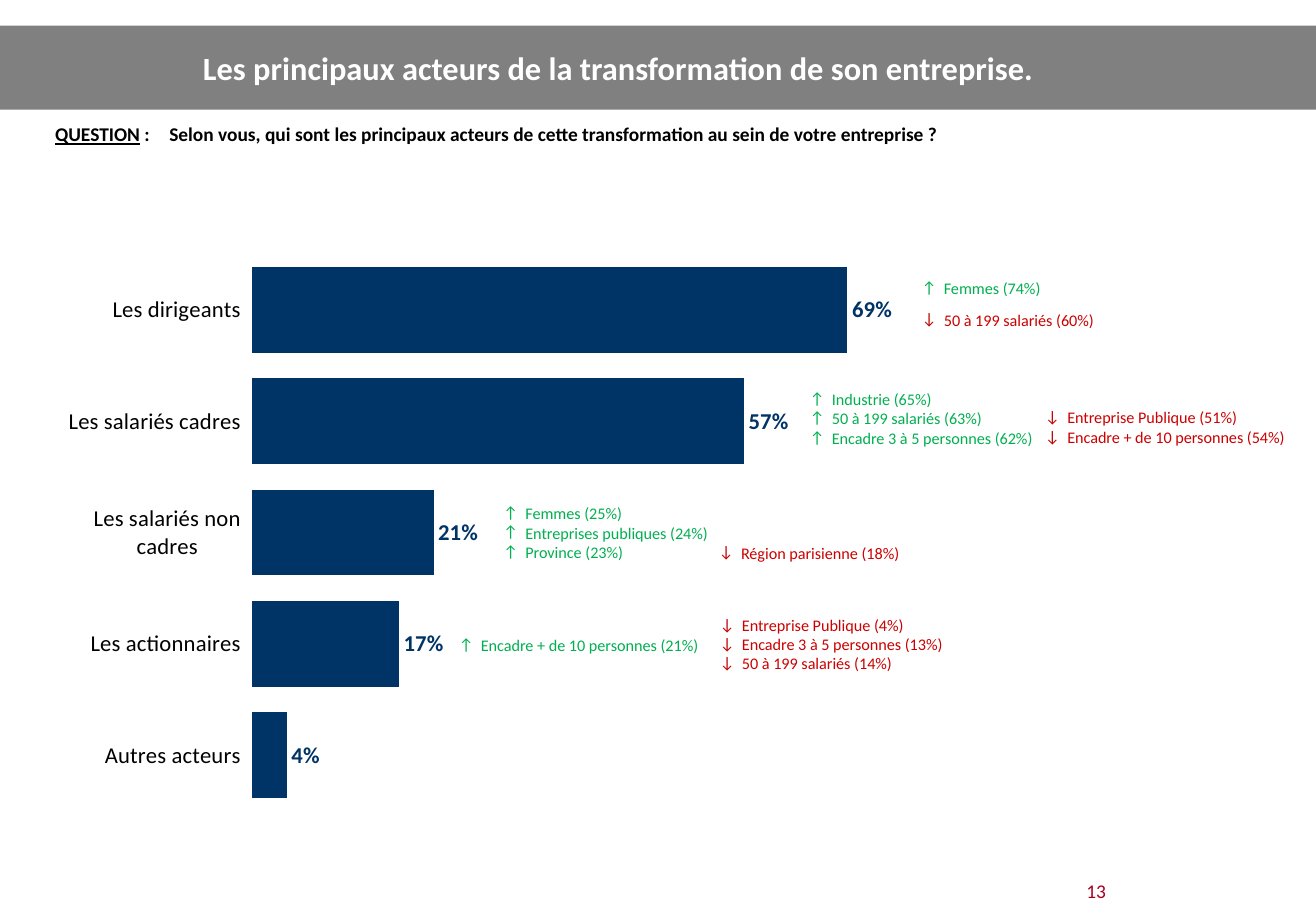
from pptx import Presentation
from pptx.chart.data import CategoryChartData
from pptx.dml.color import RGBColor
from pptx.enum.chart import XL_CHART_TYPE as ChartType, XL_LABEL_POSITION as LabelPosition
from pptx.enum.chart import XL_TICK_LABEL_POSITION as TickLabels, XL_TICK_MARK as TickMark
from pptx.enum.shapes import MSO_SHAPE as Shape
from pptx.enum.text import MSO_ANCHOR as Anchor, MSO_AUTO_SIZE as AutoSize, PP_ALIGN as Align
from pptx.oxml import parse_xml
from pptx.oxml.ns import nsdecls, qn
from pptx.util import Cm, Pt

COLORS = {
    "band": "808080", "title": "FFFFFF", "text": "000000", "page": "A50021", "bar": "003366",
    "up": "00B050", "up_arrow": "00B050", "down": "CC0000", "down_arrow": "C00000",
}
ARROWS = {"up": "↑", "down": "↓"}
NOTE_WIDTHS = {"up": 5.94, "down": 6.5}
ACTORS = {
    "Les dirigeants": 0.69,
    "Les salariés cadres": 0.57,
    "Les salariés non cadres": 0.21,
    "Les actionnaires": 0.17,
    "Autres acteurs": 0.04,
}
NOTES = [
    ("up", 19.84, 5.94, ["Femmes (74%)"]),
    ("down", 19.84, 6.63, ["50 à 199 salariés (60%)"]),
    ("up", 17.4, 8.36, ["Industrie (65%)", "50 à 199 salariés (63%)", "Encadre 3 à 5 personnes (62%)"]),
    ("down", 22.53, 8.76, ["Entreprise Publique (51%)", "Encadre + de 10 personnes (54%)"]),
    ("up", 10.72, 10.85, ["Femmes (25%)", "Entreprises publiques (24%)", "Province (23%)"]),
    ("down", 15.42, 11.71, ["Région parisienne (18%)"]),
    ("up", 9.75, 13.72, ["Encadre + de 10 personnes (21%)"]),
    ("down", 15.44, 13.28, ["Entreprise Publique (4%)", "Encadre 3 à 5 personnes (13%)", "50 à 199 salariés (14%)"]),
]


def color(key):
    return RGBColor.from_string(COLORS[key])


def style_font(font, size=10, ink="text", bold=False, underline=False):
    font.name = "Calibri"
    font.size = Pt(size)
    font.bold = bold
    font.underline = underline
    font.color.rgb = color(ink)


def write(paragraph, text, align=None, **style):
    if align is not None:
        paragraph.alignment = align
    run = paragraph.add_run()
    run.text = text
    style_font(run.font, **style)


def hang(paragraph, indent):
    properties = paragraph._p.get_or_add_pPr()
    properties.set("marL", str(Cm(indent)))
    properties.set("indent", str(-Cm(indent)))
    return properties


class SurveySlide:
    def __init__(self, presentation):
        self.slide = presentation.slides.add_slide(presentation.slide_layouts[5])
        self.width = presentation.slide_width

    def band(self, top, height):
        band = self.slide.shapes.add_shape(Shape.RECTANGLE, 0, Cm(top), self.width, Cm(height))
        band.shadow.inherit = False
        band.fill.solid()
        band.fill.fore_color.rgb = color("band")
        band.line.fill.background()
        self.slide.shapes._spTree.insert(2, band._element)

    def title(self, text, left, top, width, height):
        title = self.slide.shapes.title
        title.left, title.top, title.width, title.height = map(Cm, (left, top, width, height))
        frame = title.text_frame
        frame.auto_size = AutoSize.NONE
        frame.vertical_anchor = Anchor.MIDDLE
        write(frame.paragraphs[0], text, align=Align.JUSTIFY, size=20, ink="title", bold=True)

    def box(self, left, top, width, height):
        frame = self.slide.shapes.add_textbox(*map(Cm, (left, top, width, height))).text_frame
        frame.word_wrap = True
        frame.auto_size = AutoSize.SHAPE_TO_FIT_TEXT
        return frame

    def question(self, label, text, left, top, width, height):
        frame = self.box(left, top, width, height)
        frame.margin_left, frame.margin_right = Cm(0.23), Cm(0.91)
        frame.margin_top = frame.margin_bottom = Cm(0.1)
        paragraph = frame.paragraphs[0]
        hang(paragraph, 2.49)
        write(paragraph, label, align=Align.JUSTIFY, size=12, bold=True, underline=True)
        write(paragraph, f" :\t{text}", size=12, bold=True)

    def page_number(self, text, left, top, width, height):
        paragraph = self.box(left, top, width, height).paragraphs[0]
        write(paragraph, text, align=Align.CENTER, size=12, ink="page")

    def note(self, trend, left, top, groups):
        frame = self.box(left, top, NOTE_WIDTHS[trend], 0.26 + 0.43 * len(groups))
        for index, group in enumerate(groups):
            paragraph = frame.add_paragraph() if index else frame.paragraphs[0]
            properties = hang(paragraph, 0.48)
            for bullet in (
                f'<a:buClr {nsdecls("a")}><a:srgbClr val="{COLORS[trend + "_arrow"]}"/></a:buClr>',
                f'<a:buFont {nsdecls("a")} typeface="Calibri"/>',
                f'<a:buChar {nsdecls("a")} char="{ARROWS[trend]}"/>',
            ):
                properties.append(parse_xml(bullet))
            write(paragraph, group, ink=trend)

    def bar_chart(self, shares, left, top, width, height):
        data = CategoryChartData(number_format="0%")
        data.categories = list(shares)
        data.add_series("Series 1", list(shares.values()))
        chart = self.slide.shapes.add_chart(
            ChartType.BAR_CLUSTERED, *map(Cm, (left, top, width, height)), data).chart
        chart.has_legend = False
        chart.has_title = False
        style_font(chart.font, size=18)

        actors, scale = chart.category_axis, chart.value_axis
        actors.reverse_order = True
        actors.major_tick_mark = TickMark.OUTSIDE
        actors.tick_label_position = TickLabels.LOW
        actors.has_major_gridlines = False
        actors.format.line.fill.background()
        style_font(actors.tick_labels.font, size=14)
        scale.minimum_scale, scale.maximum_scale = 0, 0.8
        scale.has_major_gridlines = False
        scale.visible = False

        plot = chart.plots[0]
        plot.gap_width = 30
        plot.vary_by_categories = False
        bars = plot.series[0]
        bars.format.fill.solid()
        bars.format.fill.fore_color.rgb = color("bar")
        labels = bars.data_labels
        labels.show_value = True
        labels.number_format = "0%"
        labels.number_format_is_linked = False
        labels.position = LabelPosition.OUTSIDE_END
        style_font(labels.font, size=14, ink="bar", bold=True)
        self.place_plot(chart, x=0.21, y=0, w=0.77, h=1)

    def place_plot(self, chart, **fractions):
        area = chart._chartSpace.chart.plotArea
        for layout in area.findall(qn("c:layout")):
            area.remove(layout)
        sizes = "".join(f'<c:{key} val="{value}"/>' for key, value in fractions.items())
        area.insert(0, parse_xml(
            f'<c:layout {nsdecls("c")}><c:manualLayout><c:layoutTarget val="inner"/>'
            f'<c:xMode val="edge"/><c:yMode val="edge"/>{sizes}</c:manualLayout></c:layout>'))


def main():
    presentation = Presentation()
    presentation.slide_width, presentation.slide_height = Cm(28.68), Cm(19.99)
    survey = SurveySlide(presentation)
    survey.band(0.56, 1.83)
    survey.page_number("13", 23.14, 19.05, 1.5, 0.76)
    survey.title("Les principaux acteurs de la transformation de son entreprise.", 4.17, 0.56, 22.02, 1.83)
    survey.question(
        "QUESTION",
        "Selon vous, qui sont les principaux acteurs de cette transformation au sein de votre entreprise ?",
        0.97, 2.57, 26.01, 0.71)
    survey.bar_chart(ACTORS, 1.4, 5.54, 19.53, 12.14)
    for note in NOTES:
        survey.note(*note)
    presentation.save("out.pptx")


if __name__ == "__main__":
    main()
